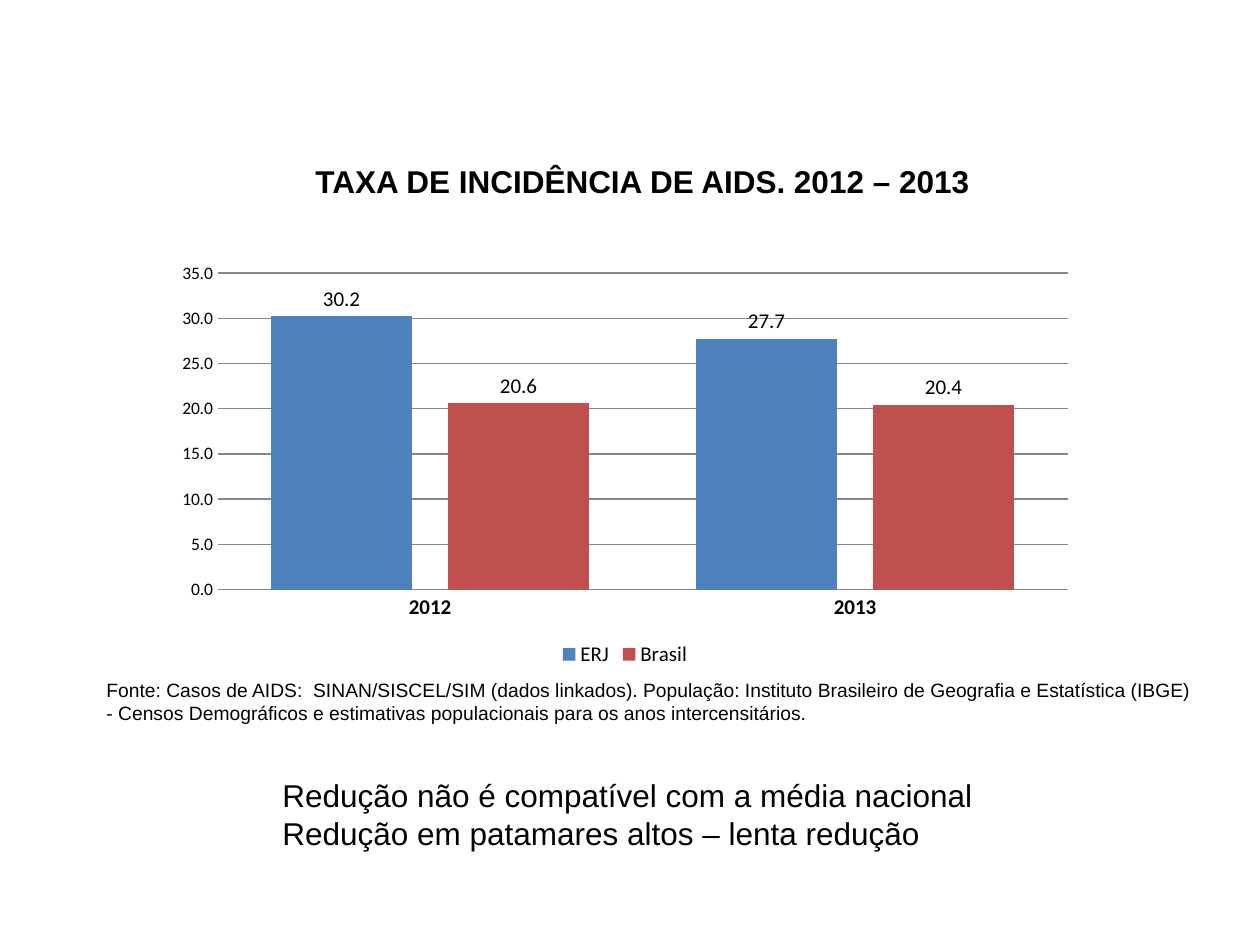
from dataclasses import dataclass

from pptx import Presentation
from pptx import util as u
from pptx.chart.data import CategoryChartData
from pptx.dml.color import RGBColor
from pptx.enum import chart as charts, text


@dataclass(frozen=True)
class Theme:
    ink: RGBColor = RGBColor(0, 0, 0)
    grid: RGBColor = RGBColor(0x86, 0x86, 0x86)
    series: tuple = (RGBColor(0x4F, 0x81, 0xBD), RGBColor(0xC0, 0x50, 0x4D))
    text_font: str = "Arial"
    chart_font: str = "Calibri"
    heading: int = 18
    source: int = 11
    label: int = 12
    tick: int = 10


THEME = Theme()


def px(length):
    return u.Emu(round(length * 914400 / 126))


def style_font(font, name, size, bold=False):
    font.name = name
    font.size = u.Pt(size)
    font.bold = bold
    font.color.rgb = THEME.ink


def add_text(slide, box, lines, size, bold=False, align=text.PP_ALIGN.LEFT, wrap=True):
    shape = slide.shapes.add_textbox(*map(px, box))
    frame = shape.text_frame
    frame.word_wrap = wrap
    frame.auto_size = text.MSO_AUTO_SIZE.SHAPE_TO_FIT_TEXT
    for index, line in enumerate(lines):
        paragraph = frame.add_paragraph() if index else frame.paragraphs[0]
        paragraph.alignment = align
        run = paragraph.add_run()
        run.text = line
        style_font(run.font, THEME.text_font, size, bold)


def style_axes(chart):
    category = chart.category_axis
    value = chart.value_axis
    for axis in (category, value):
        axis.major_tick_mark = axis.minor_tick_mark = charts.XL_TICK_MARK.NONE
    style_font(category.tick_labels.font, THEME.chart_font, THEME.label, True)
    category.format.line.color.rgb = THEME.grid
    style_font(value.tick_labels.font, THEME.chart_font, THEME.tick)
    value.minimum_scale, value.maximum_scale, value.major_unit = 0, 35, 5
    value.tick_labels.number_format = "0.0"
    value.tick_labels.number_format_is_linked = False
    value.format.line.fill.background()
    value.has_major_gridlines = True
    value.major_gridlines.format.line.color.rgb = THEME.grid


def add_incidence_chart(slide, box):
    data = CategoryChartData(number_format="0.0")
    data.categories = ["2012", "2013"]
    data.add_series("ERJ", (30.2, 27.7))
    data.add_series("Brasil", (20.6, 20.4))
    chart = slide.shapes.add_chart(
        charts.XL_CHART_TYPE.COLUMN_CLUSTERED, *map(px, box), data
    ).chart
    style_font(chart.font, THEME.chart_font, THEME.tick)
    chart.has_title = False
    chart.has_legend = True
    chart.legend.position = charts.XL_LEGEND_POSITION.BOTTOM
    chart.legend.include_in_layout = False
    style_font(chart.legend.font, THEME.chart_font, THEME.label)
    style_axes(chart)

    plot = chart.plots[0]
    plot.gap_width = 75
    plot.overlap = -25
    plot.vary_by_categories = False
    for series, color in zip(plot.series, THEME.series):
        series.format.fill.solid()
        series.format.fill.fore_color.rgb = color
        series.invert_if_negative = False
        labels = series.data_labels
        labels.show_value = True
        labels.number_format = "0.0"
        labels.number_format_is_linked = False
        labels.position = charts.XL_LABEL_POSITION.OUTSIDE_END
        style_font(labels.font, THEME.chart_font, THEME.label)


def build_chart_slide(slide, box):
    left, top, width, height = box
    add_incidence_chart(slide, (left + 164, top + 255, 922, 417))
    add_text(
        slide,
        (left + 294, top + 156, 697, 50),
        ["TAXA DE INCIDÊNCIA DE AIDS. 2012 – 2013"],
        THEME.heading,
        bold=True,
        align=text.PP_ALIGN.CENTER,
        wrap=False,
    )
    add_text(
        slide,
        (left + 270, top + 770, 737, 89),
        [
            "Redução não é compatível com a média nacional",
            "Redução em patamares altos – lenta redução",
        ],
        THEME.heading,
    )
    add_text(
        slide,
        (left + 94, top + 672, 1111, 59),
        [
            "Fonte: Casos de AIDS:  SINAN/SISCEL/SIM (dados linkados). "
            "População: Instituto Brasileiro de Geografia e Estatística (IBGE) "
            "- Censos Demográficos e estimativas populacionais para os anos "
            "intercensitários."
        ],
        THEME.source,
    )


def main():
    presentation = Presentation()
    presentation.slide_width = px(1260)
    presentation.slide_height = px(945)
    slide = presentation.slides.add_slide(presentation.slide_layouts[6])
    build_chart_slide(slide, (0, 0, 1260, 945))
    presentation.save("out.pptx")


if __name__ == "__main__":
    main()
